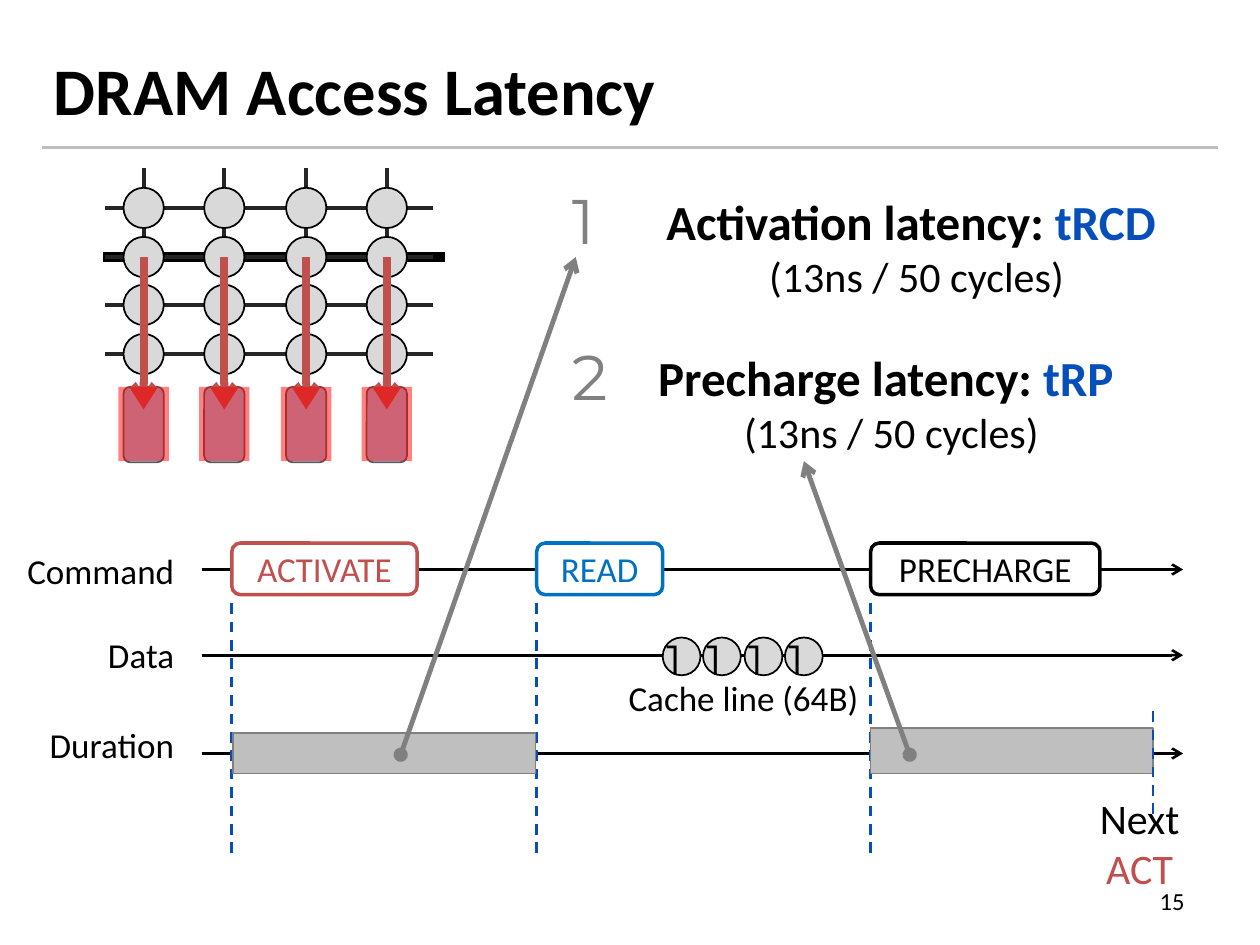
import pptx
import pptx.util
import pptx.dml.color
import pptx.enum.dml
import pptx.enum.shapes
import pptx.enum.text
import pptx.oxml
import pptx.oxml.ns

PX = 9144
COLORS = {
    "black": "000000", "white": "FFFFFF", "wire": "262626", "cell": "D9D9D9",
    "bar": "BFBFBF", "gray": "808080", "edge": "595959", "amplifier": "9DC3E6",
    "red": "C0504D", "highlight": "FF0000", "blue": "0070C0", "accent": "064FBA",
}
ALIGN = pptx.enum.text.PP_ALIGN
ANCHOR = pptx.enum.text.MSO_ANCHOR
SHAPE = pptx.enum.shapes.MSO_SHAPE


def color(name):
    """Return the named colour."""
    return pptx.dml.color.RGBColor.from_string(COLORS[name])


def apply_format(target, **values):
    """Set each given attribute on the target."""
    for name, value in values.items():
        setattr(target, name, value)


def place(box, left, top):
    """Return the EMU position of a point relative to the box."""
    return round((box[0] + left) * PX), round((box[1] + top) * PX)


def append_xml(parent, tag, **attributes):
    """Append a drawing element with attributes and return it."""
    element = pptx.oxml.parse_xml(f"<a:{tag} {pptx.oxml.ns.nsdecls('a')}/>")
    for name, value in attributes.items():
        element.set(name, value)
    parent.append(element)
    return element


def add_line(slide, box, start, end, name, width, dash=False, head=None, tail=None):
    """Draw a line between two points of the box."""
    line = slide.shapes.add_connector(
        pptx.enum.shapes.MSO_CONNECTOR.STRAIGHT, *place(box, *start), *place(box, *end))
    line.line.color.rgb = color(name)
    line.line.width = pptx.util.Pt(width)
    if dash:
        line.line.dash_style = pptx.enum.dml.MSO_LINE.DASH
    for tag, kind in (("headEnd", head), ("tailEnd", tail)):
        if kind:
            append_xml(line.line._get_or_add_ln(), tag, type=kind)
    append_xml(line._element.spPr, "effectLst")


def write(frame, paragraphs, size, align=ALIGN.LEFT, anchor=ANCHOR.TOP, font="Calibri"):
    """Write paragraphs of (text, format) runs; None breaks the line."""
    apply_format(frame, word_wrap=True, vertical_anchor=anchor)
    for index, runs in enumerate(paragraphs):
        paragraph = frame.add_paragraph() if index else frame.paragraphs[0]
        paragraph.alignment = align
        for part in runs:
            if part is None:
                paragraph.add_line_break()
                continue
            text, name, values = part
            run = paragraph.add_run()
            run.text = text
            formats = {"name": font, "size": pptx.util.Pt(size), "bold": False}
            apply_format(run.font, **{**formats, **values})
            run.font.color.rgb = color(name)


def add_text(slide, box, left, top, width, height, paragraphs, size, **formats):
    """Add a text box relative to the box."""
    shape = slide.shapes.add_textbox(*place(box, left, top), width * PX, height * PX)
    write(shape.text_frame, paragraphs, size, **formats)


def add_shape(slide, box, kind, left, top, width, height, fill, line=None, weight=1):
    """Add a filled preset shape relative to the box."""
    shape = slide.shapes.add_shape(kind, *place(box, left, top), width * PX, height * PX)
    shape.shadow.inherit = False
    shape.fill.solid()
    shape.fill.fore_color.rgb = color(fill)
    if line:
        shape.line.color.rgb = color(line)
        shape.line.width = pptx.util.Pt(weight)
    else:
        shape.line.fill.background()
    return shape


def add_heading(slide, box):
    """Place the title above its rule, and the page number."""
    add_line(slide, box, (0, 109), (934, 109), "bar", 1.5)
    add_text(slide, box, 0, 0, 933, 125,
             [[("DRAM Access Latency", "black", {"bold": True})]], 38, anchor=ANCHOR.MIDDLE)
    add_text(slide, box, 684, 687, 233, 40, [[("15", "black", {})]], 14,
             align=ALIGN.RIGHT, anchor=ANCHOR.MIDDLE)


def add_cell_array(slide, box):
    """Place the DRAM cells, bitlines and highlighted row buffer."""
    columns = [32 + round(193 * index / 3) for index in range(4)]
    rows = [32 + round(116 * index / 3) for index in range(4)]
    add_line(slide, box, (0, rows[1]), (271, rows[1]), "black", 6)
    for row in rows:
        add_line(slide, box, (1, row), (262, row), "wire", 2.25)
    for column in columns:
        add_shape(slide, box, SHAPE.ROUNDED_RECTANGLE, column - 16, 174, 32, 60,
                  "amplifier", "edge")
        add_line(slide, box, (column, 0), (column, 174), "wire", 2.25)
        for row in rows:
            add_shape(slide, box, SHAPE.OVAL, column - 16, row - 16, 32, 32, "cell", "black")
        add_line(slide, box, (column, rows[1]), (column, 192), "red", 4.5, tail="arrow")
        glow = add_shape(slide, box, SHAPE.RECTANGLE, column - 20, 174, 40, 59, "highlight")
        append_xml(glow.fill._xPr.solidFill[0], "alpha", val="49000")


def add_timeline(slide, box):
    """Place the command, data and duration axes with their events."""
    for label, axis, label_top in (("Command", 21, 0), ("Data", 89, 67), ("Duration", 167, 138)):
        add_line(slide, box, (0, axis), (779, axis), "black", 1.5, tail="arrow")
        add_text(slide, box, -151, label_top, 139, 44, [[(label, "black", {})]], 20,
                 align=ALIGN.RIGHT)
    for label, left, width, name in (("ACTIVATE", 24, 147, "red"), ("READ", 266, 100, "blue"),
                                     ("PRECHARGE", 531, 182, "black")):
        command = add_shape(slide, box, SHAPE.ROUNDED_RECTANGLE, left, 0, width, 41,
                            "white", name, 2)
        write(command.text_frame, [[(label, name, {})]], 20,
              align=ALIGN.CENTER, anchor=ANCHOR.MIDDLE)
        add_line(slide, box, (left, 246), (left, 44), "accent", 1.5, dash=True)
    for left, top, width, height in ((25, 151, 240, 32), (531, 147, 224, 36)):
        add_shape(slide, box, SHAPE.RECTANGLE, left, top, width, height, "bar", "gray")
    for index in range(4):
        left = 366 + round(32.4 * index)
        add_shape(slide, box, SHAPE.OVAL, left, 75, 30, 30, "cell", "black")
        add_text(slide, box, left - 7, 67, 43, 50, [[("1", "black", {})]], 24,
                 font="Montserrat")
    add_text(slide, box, 329, 101, 209, 44, [[("Cache line (64B)", "black", {})]], 20)
    add_line(slide, box, (755, 215), (755, 133), "accent", 1.5, dash=True)
    add_text(slide, box, 699, 193, 91, 91, [[("Next", "black", {})], [("ACT", "red", {})]], 24,
             align=ALIGN.CENTER)


def add_latency(slide, box, number, label, symbol, start, end):
    """Place a numbered latency with an arrow from its duration bar."""
    add_line(slide, box, start, end, "gray", 2.75, head="oval", tail="arrow")
    bold = {"bold": True}
    runs = [(label, "black", bold), (symbol, "accent", bold), None,
            ("(13ns / 50 cycles)", "black", {"size": pptx.util.Pt(24)})]
    add_text(slide, box, 0, 0, box[2], box[3], [runs], 28, align=ALIGN.CENTER)
    add_text(slide, box, -40, -8, 54, 71, [[(number, "gray", {})]], 36, font="Montserrat")


def main():
    """Build and save the slide."""
    presentation = pptx.Presentation()
    apply_format(presentation, slide_width=1000 * PX, slide_height=750 * PX)
    slide = presentation.slides.add_slide(presentation.slide_layouts[6])
    add_heading(slide, (33, 8, 934, 727))
    add_cell_array(slide, (82, 133, 271, 234))
    add_timeline(slide, (160, 431, 779, 284))
    add_latency(slide, (484, 147, 487, 98), "1", "Activation latency: ", "tRCD ",
                (-166, 452), (-27, 57))
    add_latency(slide, (484, 271, 447, 98), "2", "Precharge latency: ", "tRP ",
                (238, 328), (154, 95))
    presentation.save("out.pptx")


if __name__ == "__main__":
    main()
